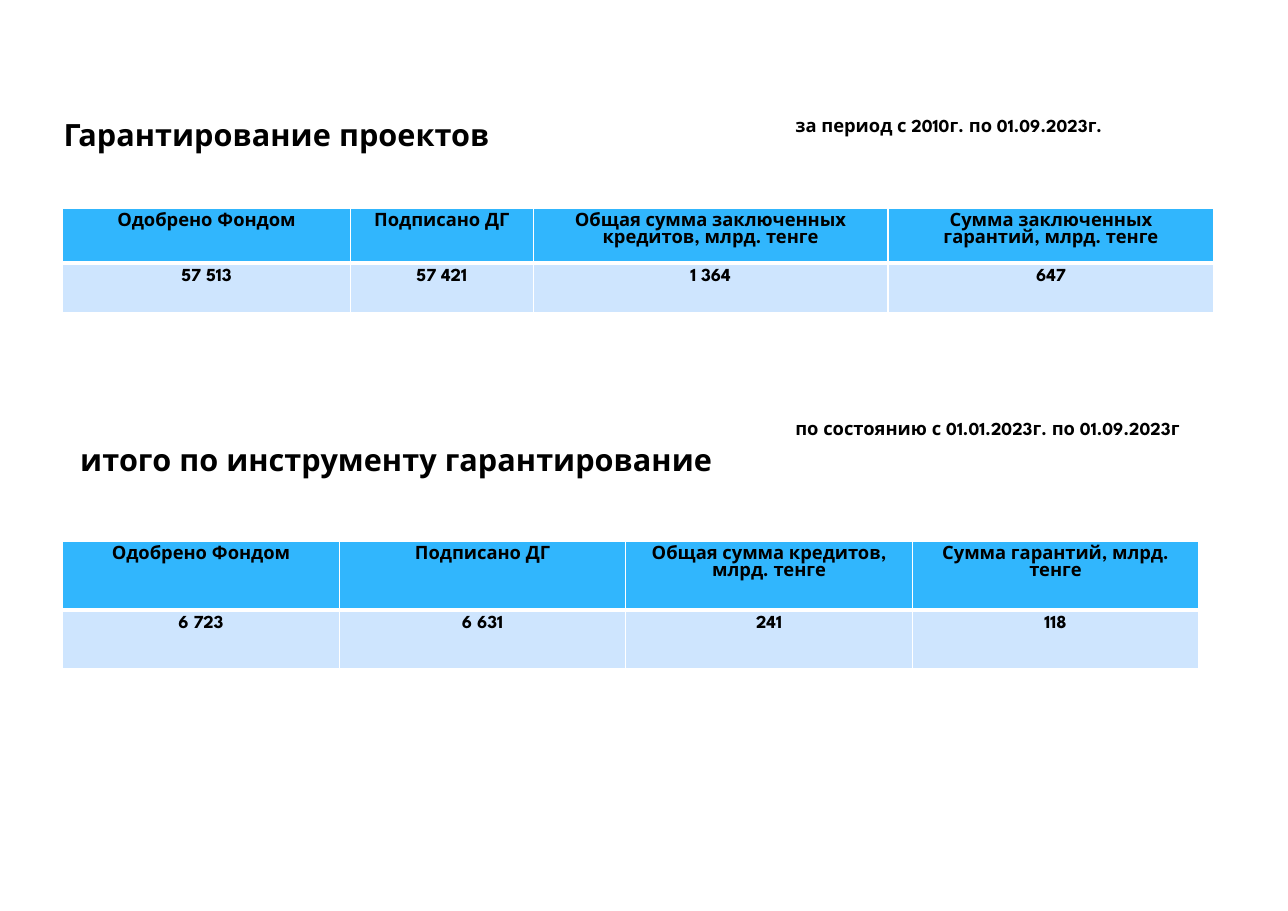
import pptx
import pptx.util
import pptx.dml.color
import pptx.enum.text
import pptx.oxml
import pptx.oxml.ns

PX = 9144


def color(value):
    return pptx.dml.color.RGBColor.from_string(value)


def write(tf, text, size):
    p = tf.paragraphs[0]
    r = p.add_run()
    r.text = text
    fmt = {"name": "League Spartan", "size": pptx.util.Pt(size), "bold": True}
    for key, value in fmt.items():
        setattr(r.font, key, value)
    r.font.color.rgb = color("000000")
    return p


prs = pptx.Presentation()
prs.slide_width, prs.slide_height = 1169 * PX, 827 * PX
s = prs.slides.add_slide(prs.slide_layouts[6])

labels = [
    (712, 99, 363, 30, 12, "за период с 2010г. по 01.09.2023г."),
    (48, 100, 724, 44, 20, "Гарантирование проектов"),
    (63, 395, 702, 44, 20, "итого по инструменту гарантирование"),
    (712, 374, 394, 30, 12, "по состоянию с 01.01.2023г. по 01.09.2023г"),
]
for x, y, w, h, size, text in labels:
    tf = s.shapes.add_textbox(x * PX, y * PX, w * PX, h * PX).text_frame
    tf.word_wrap = True
    write(tf, text, size)

tables = [
    (189, [261, 166, 322, 296], [50, 45], [
        ["Одобрено Фондом", "Подписано ДГ",
         "Общая сумма заключенных кредитов, млрд. тенге",
         "Сумма заключенных гарантий, млрд. тенге"],
        ["57 513", "57 421", "1 364", "647"],
    ]),
    (491, [251, 260, 260, 260], [63, 53], [
        ["Одобрено Фондом", "Подписано ДГ",
         "Общая сумма кредитов, млрд. тенге", "Сумма гарантий, млрд. тенге"],
        ["6 723", "6 631", "241", "118"],
    ]),
]
fills = ["31B6FD", "CEE5FE"]
borders = [{"L": 1, "R": 1, "T": 1, "B": 3}, {"L": 1, "R": 1, "T": 3, "B": 1}]
ns = pptx.oxml.ns.nsdecls("a")

for y, widths, heights, rows in tables:
    table = s.shapes.add_table(
        len(rows), len(widths), 57 * PX, y * PX, sum(widths) * PX, sum(heights) * PX
    ).table
    for col, width in zip(table.columns, widths):
        col.width = width * PX
    for i, (row, height) in enumerate(zip(table.rows, heights)):
        row.height = height * PX
        for cell, text in zip(row.cells, rows[i]):
            p = write(cell.text_frame, text, 12)
            p.alignment = pptx.enum.text.PP_ALIGN.CENTER
            tcPr = cell._tc.get_or_add_tcPr()
            for side, width in borders[i].items():
                tcPr.append(pptx.oxml.parse_xml(
                    f'<a:ln{side} {ns} w="{pptx.util.Pt(width)}"><a:solidFill>'
                    f'<a:srgbClr val="FFFFFF"/></a:solidFill></a:ln{side}>'
                ))
            cell.fill.solid()
            cell.fill.fore_color.rgb = color(fills[i])

prs.save("out.pptx")
